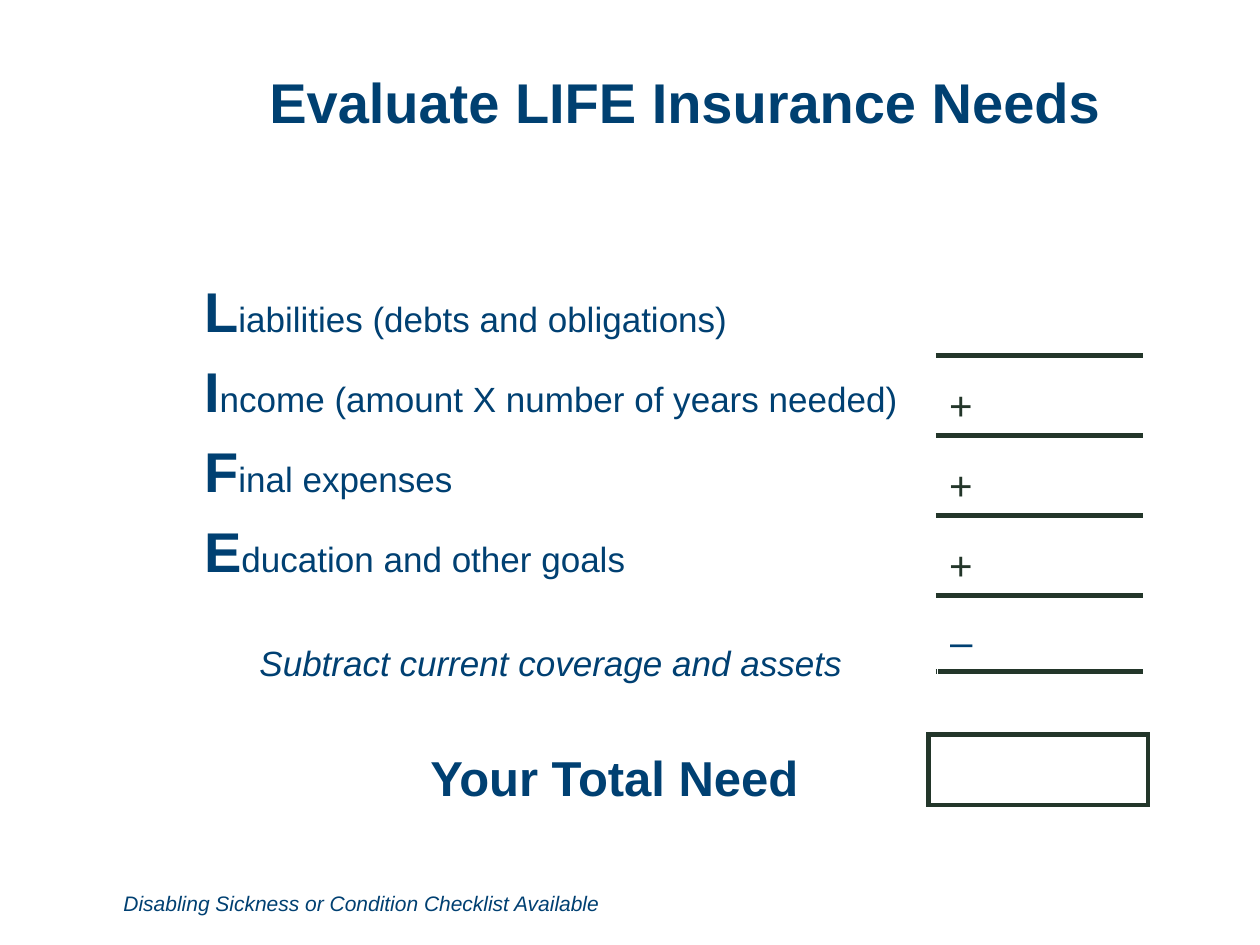
from lxml import etree
from pptx import Presentation
from pptx.dml.color import RGBColor
from pptx.enum.text import MSO_ANCHOR, PP_ALIGN
from pptx.oxml.ns import qn
from pptx.util import Cm, Pt

LEFT, CENTER, RIGHT = PP_ALIGN.LEFT, PP_ALIGN.CENTER, PP_ALIGN.RIGHT
TOP, MIDDLE, BOTTOM = MSO_ANCHOR.TOP, MSO_ANCHOR.MIDDLE, MSO_ANCHOR.BOTTOM
FONT = "Arial"
NAVY = "004072"
TITLE_BLUE = "004071"
DARK_GREEN = "23362A"
BORDER_POINTS = 3
NEEDS = [
    ("L", "iabilities (debts and obligations)", ""),
    ("I", "ncome (amount X number of years needed)", "+"),
    ("F", "inal expenses", "+"),
    ("E", "ducation and other goals", "+"),
]


def rgb(value):
    """Turn a hex string into a colour."""
    return RGBColor.from_string(value)


def style_font(font, size, color=NAVY, bold=False, italic=False):
    """Set the typeface, size, colour and emphasis of a font."""
    font.name = FONT
    font.size = Pt(size)
    font.color.rgb = rgb(color)
    font.bold = bold
    font.italic = italic


def add_label(slide, text, box, size, align=LEFT, anchor=TOP, **style):
    """Add a wrapped text box with one paragraph."""
    frame = slide.shapes.add_textbox(*(Cm(length) for length in box)).text_frame
    frame.word_wrap = True
    frame.vertical_anchor = anchor
    paragraph = frame.paragraphs[0]
    paragraph.text = text
    paragraph.alignment = align
    style_font(paragraph.font, size, **style)
    return paragraph


def add_plain_table(slide, left, top, widths, heights):
    """Add a table without banding or fills."""
    table = slide.shapes.add_table(
        len(heights), len(widths), Cm(left), Cm(top), Cm(sum(widths)), Cm(sum(heights))
    ).table
    table.first_row = table.horz_banding = False
    for column, width in zip(table.columns, widths):
        column.width = Cm(width)
    for row, height in zip(table.rows, heights):
        row.height = Cm(height)
    for cell in table.iter_cells():
        cell.fill.background()
    return table


def set_borders(cell, sides):
    """Draw dark borders on the given sides, in the order L, R, T, B."""
    properties = cell._tc.get_or_add_tcPr()
    for position, side in enumerate(sides):
        line = etree.Element(qn(f"a:ln{side}"), w=str(Pt(BORDER_POINTS)))
        fill = etree.SubElement(line, qn("a:solidFill"))
        etree.SubElement(fill, qn("a:srgbClr"), val=DARK_GREEN)
        properties.insert(position, line)


def write_sign(cell, sign, color, anchor):
    """Write an arithmetic sign into a cell."""
    cell.vertical_anchor = anchor
    paragraph = cell.text_frame.paragraphs[0]
    paragraph.text = sign
    style_font(paragraph.font, 23, color)


def add_needs_table(slide):
    """Add the table of needs with its ruled amount column."""
    table = add_plain_table(slide, 3.86, 5.56, [15.02, 4.14], [1.54] * 5 + [1.63] * 2)
    for row, (initial, rest, sign) in enumerate(NEEDS):
        paragraph = table.cell(row, 0).text_frame.paragraphs[0]
        for text, size, bold in ((initial, 32, True), (rest, 20, False)):
            run = paragraph.add_run()
            run.text = text
            style_font(run.font, size, bold=bold)
        if sign:
            write_sign(table.cell(row, 1), sign, DARK_GREEN, BOTTOM)
    for row in range(5):
        set_borders(table.cell(row, 1), "TB" if row else "B")
    for row in (5, 6):
        table.cell(row, 0).merge(table.cell(row, 1))


def main():
    """Build the slide and save it."""
    presentation = Presentation()
    presentation.slide_width, presentation.slide_height = Cm(25.4), Cm(19.05)
    slide = presentation.slides.add_slide(presentation.slide_layouts[6])

    title = add_label(slide, "Evaluate LIFE Insurance Needs", (5.18, 0.28, 18.44, 3.68),
                      32, anchor=MIDDLE, color=TITLE_BLUE, bold=True)
    title.line_spacing = 0.9
    add_needs_table(slide)
    add_label(slide, "Subtract current coverage and assets", (1.96, 12.8, 15.27, 1.12),
              20, RIGHT, italic=True)
    minus_table = add_plain_table(slide, 18.9, 12.37, [5.11], [1.09])
    write_sign(minus_table.cell(0, 0), "–", NAVY, TOP)
    add_label(slide, "Your Total Need", (7.57, 14.94, 9.63, 1.45), 28, CENTER, bold=True)
    total_table = add_plain_table(slide, 18.72, 14.81, [4.42], [1.42])
    set_borders(total_table.cell(0, 0), "LRTB")
    add_label(slide, "Disabling Sickness or Condition Checklist Available",
              (2.24, 17.83, 18.19, 0.76), 12, italic=True)

    presentation.save("out.pptx")


if __name__ == "__main__":
    main()
